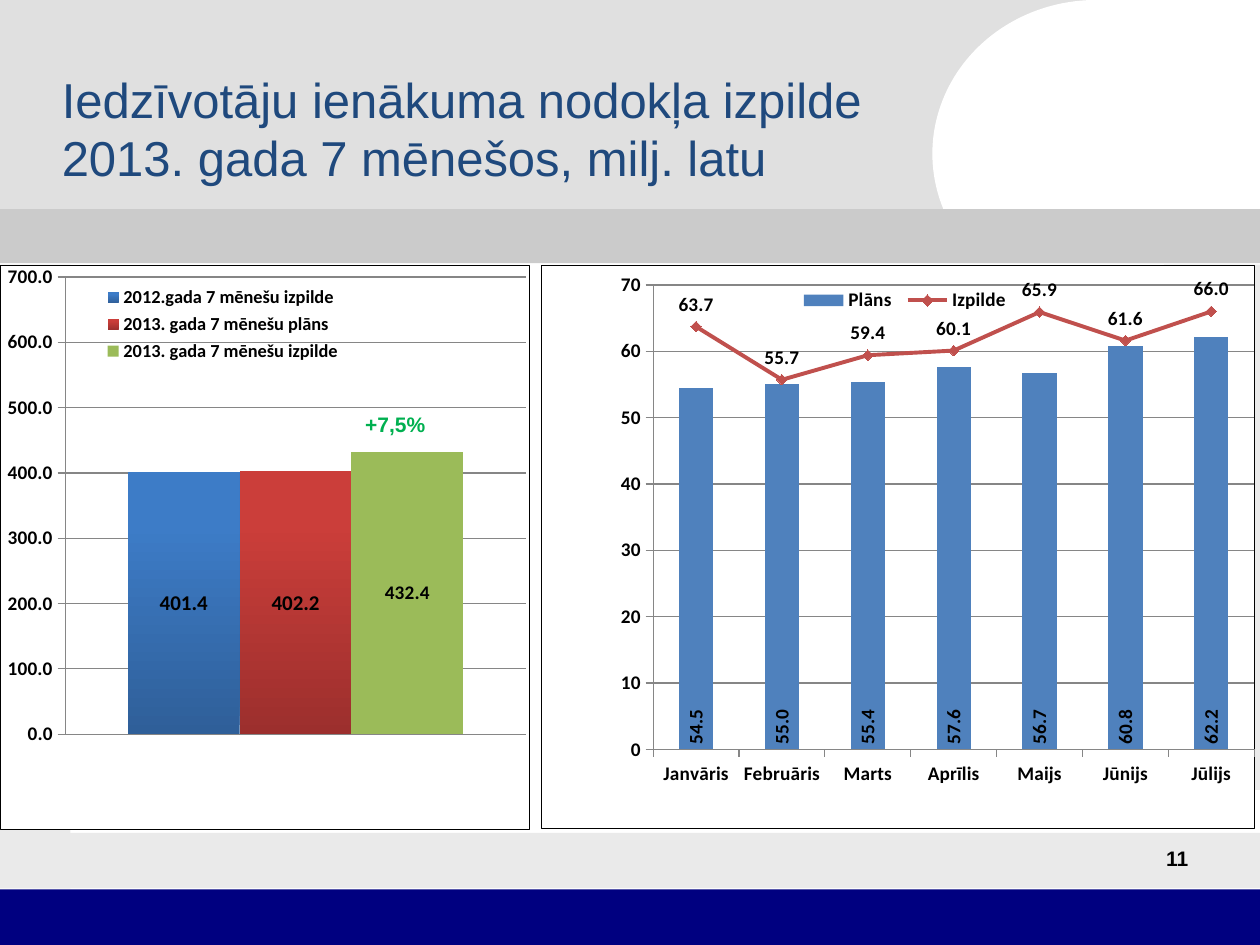
from lxml.etree import SubElement
from pptx import Presentation
from pptx.chart.data import CategoryChartData
from pptx.dml.color import RGBColor
from pptx.enum.chart import (XL_CHART_TYPE, XL_LABEL_POSITION, XL_LEGEND_POSITION,
                             XL_MARKER_STYLE, XL_TICK_MARK)
from pptx.enum.shapes import MSO_SHAPE
from pptx.enum.text import MSO_ANCHOR, PP_ALIGN
from pptx.oxml import parse_xml
from pptx.oxml.ns import nsdecls, qn
from pptx.util import Inches, Pt

WIDE, HIGH = 10, 7.5
HEX = {"white": "FFFFFF", "head": "E0E0E0", "side": "EAEAEA", "band": "CBCBCB",
       "navy": "000080", "title": "1F497D", "black": "000000", "gain": "00B050",
       "grid": "868686", "blue": "4F81BD", "red": "C0504D", "green": "9BBB59"}
MONTHS = ["Janvāris", "Februāris", "Marts", "Aprīlis", "Maijs", "Jūnijs", "Jūlijs"]
PLAN = [54.5, 55, 55.4, 57.6, 56.7, 60.8, 62.2]
REAL = [63.7, 55.7, 59.4, 60.1, 65.9, 61.6, 66]
# Name, value, fill (dark foot and light top for a gradient), label size
TOTALS = [("2012.gada 7 mēnešu izpilde", 401.4, ("2F5F99", "3D7CC7"), 12),
          ("2013. gada 7 mēnešu plāns", 402.2, ("9C2F2D", "CB3E3A"), 12),
          ("2013. gada 7 mēnešu izpilde", 432.4, None, 11)]


def rgb(name):
    return RGBColor.from_string(HEX.get(name, name))


def paint(fill, name):
    fill.solid()
    fill.fore_color.rgb = rgb(name)


def style(font, size, name="black", face="Calibri", bold=True):
    for key, value in {"size": Pt(size), "name": face, "bold": bold}.items():
        setattr(font, key, value)
    font.color.rgb = rgb(name)


def panel(slide, kind, box, name):
    shape = slide.shapes.add_shape(kind, *map(Inches, box))
    shape.shadow.inherit = False
    paint(shape.fill, name)
    shape.line.fill.background()


def write(slide, text, box, name, align):
    frame = slide.shapes.add_textbox(*map(Inches, box)).text_frame
    frame.word_wrap = True
    para = frame.paragraphs[0]
    para.text, para.alignment = text, align
    style(para.font, 12, name, "Arial")


def backdrop(slide):
    rect, oval = MSO_SHAPE.RECTANGLE, MSO_SHAPE.OVAL
    for kind, box, name in [
            (rect, (0, 0, 9.09, 1.69), "head"),
            (oval, (7.4, 0, 2.6, 2.44), "white"),
            (rect, (0, 2.1, 0.56, 4.95), "side"),
            (rect, (0.26, 6.61, 9.74, 0.44), "side"),
            (rect, (0, 7.06, WIDE, 0.44), "navy"),
            (rect, (9.24, 2.1, 0.76, 4.17), "side"),
            (rect, (8.62, 0, 1.38, 2.02), "white"),
            (rect, (0, 1.66, WIDE, 0.43), "band")]:
        panel(slide, kind, box, name)


def headline(slide, text):
    title = slide.shapes.title
    slide.shapes._spTree.append(title._element)  # in front of the backdrop
    for key, value in zip(("left", "top", "width", "height"), (0.39, 0.39, 7.5, 1.25)):
        setattr(title, key, Inches(value))
    frame = title.text_frame
    frame.text = text
    frame.vertical_anchor, frame.word_wrap = MSO_ANCHOR.MIDDLE, True
    para = frame.paragraphs[0]
    para.alignment = PP_ALIGN.LEFT
    style(para.font, 28, "title", "Arial", False)


def place(parent, spot, inner=False):
    """Fix a chart part at shares of the chart's size."""
    old = parent.find(qn("c:layout"))
    if old is not None:
        parent.remove(old)
    layout = parse_xml(f'<c:layout {nsdecls("c")}><c:manualLayout/></c:layout>')
    rules = [("layoutTarget", "inner")] if inner else []
    rules += [("xMode", "edge"), ("yMode", "edge"), *zip("xywh", spot)]
    for tag, value in rules:
        SubElement(layout[0], qn(f"c:{tag}")).set("val", str(value))
    parent.insert(0 if inner else 1, layout)


def add_chart(slide, box, cats, series, gap, plot, key, key_size):
    data = CategoryChartData(number_format="0.0")
    data.categories = cats
    for name, values in series:
        data.add_series(name, values)
    chart = slide.shapes.add_chart(
        XL_CHART_TYPE.COLUMN_CLUSTERED, *map(Inches, box), data).chart
    chart.has_title = False
    style(chart.font, 11)
    # White frame with a thin black border
    chart._chartSpace.find(qn("c:chart")).addnext(parse_xml(
        f'<c:spPr {nsdecls("c", "a")}><a:solidFill><a:srgbClr val="{HEX["white"]}"/>'
        f'</a:solidFill><a:ln w="9525"><a:solidFill><a:srgbClr val="{HEX["black"]}"/>'
        '</a:solidFill></a:ln></c:spPr>'))
    bars = chart.plots[0]
    bars.gap_width, bars.overlap, bars.vary_by_categories = gap, 0, False
    place(chart._chartSpace.chart.plotArea, plot, True)
    # Legend
    chart.has_legend = True
    chart.legend.position = XL_LEGEND_POSITION.BOTTOM
    chart.legend.include_in_layout = False
    style(chart.legend.font, key_size)
    place(chart.legend._element, key)
    # Axes
    axis = chart.value_axis
    axis.has_major_gridlines = True
    for line in (axis.major_gridlines.format.line, axis.format.line,
                 chart.category_axis.format.line):
        line.color.rgb, line.width = rgb("grid"), Pt(0.75)
    for each in (axis, chart.category_axis):
        each.major_tick_mark = XL_TICK_MARK.OUTSIDE
    return chart


def label(series, spot, form, size=11):
    labels = series.data_labels
    for key, value in {"show_value": True, "position": spot, "number_format": form,
                       "number_format_is_linked": False}.items():
        setattr(labels, key, value)
    style(labels.font, size)
    return labels


def totals(slide):
    chart = add_chart(slide, (0, 2.1, 4.21, 4.49), ["1"],
                      [(name, [value]) for name, value, _, _ in TOTALS], 112,
                      (0.122, 0.021, 0.871, 0.81), (0.18, 0.03, 0.48, 0.15), 10.5)
    axis = chart.value_axis
    axis.minimum_scale, axis.maximum_scale = 0, 700
    axis.tick_labels.number_format = "0.0"
    axis.tick_labels.number_format_is_linked = False
    chart.category_axis.visible = False
    for series, (_, _, shades, size) in zip(chart.plots[0].series, TOTALS):
        fill = series.format.fill
        if shades:
            fill.gradient()
            fill.gradient_angle = 90
            for stop, shade, at in zip(fill.gradient_stops, shades, (0, 0.8)):
                stop.color.rgb, stop.position = rgb(shade), at
        else:
            paint(fill, "green")
        label(series, XL_LABEL_POSITION.CENTER, "0.0", size)


def to_line(chart):
    """Move the last column series to a line plot on the same axes."""
    bar = chart._chartSpace.chart.plotArea.find(qn("c:barChart"))
    ser = bar.findall(qn("c:ser"))[-1]
    for flag in ser.findall(qn("c:invertIfNegative")):
        ser.remove(flag)
    line = parse_xml(f'<c:lineChart {nsdecls("c")}><c:grouping val="stacked"/>'
                     '<c:varyColors val="0"/><c:marker val="1"/></c:lineChart>')
    line.insert(2, ser)
    for axis in bar.findall(qn("c:axId")):
        SubElement(line, qn("c:axId")).set("val", axis.get("val"))
    bar.addnext(line)


def months(slide):
    chart = add_chart(slide, (4.29, 2.1, 5.67, 4.48), MONTHS,
                      [("Plāns", PLAN), ("Izpilde", REAL)], 150,
                      (0.157, 0.035, 0.843, 0.825), (0.355, 0.035, 0.31, 0.055), 11)
    chart.value_axis.tick_labels.number_format = "0"
    chart.value_axis.tick_labels.number_format_is_linked = False
    to_line(chart)
    plan, real = (plot.series[0] for plot in chart.plots)
    paint(plan.format.fill, "blue")
    labels = label(plan, XL_LABEL_POSITION.INSIDE_BASE, "#,##0.0")
    turn = labels._element.find(qn("c:txPr")).find(qn("a:bodyPr"))
    turn.set("rot", "-5400000")
    turn.set("vert", "horz")
    real.smooth = False
    real.format.line.color.rgb, real.format.line.width = rgb("red"), Pt(2.25)
    real.marker.style, real.marker.size = XL_MARKER_STYLE.DIAMOND, 6
    paint(real.marker.format.fill, "red")
    real.marker.format.line.color.rgb = rgb("red")
    label(real, XL_LABEL_POSITION.ABOVE, "#,##0.0")


def main():
    deck = Presentation()
    deck.slide_width, deck.slide_height = Inches(WIDE), Inches(HIGH)
    slide = deck.slides.add_slide(deck.slide_layouts[5])
    backdrop(slide)
    headline(slide, "Iedzīvotāju ienākuma nodokļa izpilde \v2013. gada 7 mēnešos, milj. latu")
    write(slide, "11", (7.27, 6.66, 2.26, 0.5), "black", PP_ALIGN.RIGHT)
    totals(slide)
    write(slide, "+7,5%", (2.8, 3.22, 0.79, 0.3), "gain", PP_ALIGN.LEFT)
    months(slide)
    deck.save("out.pptx")


if __name__ == "__main__":
    main()
